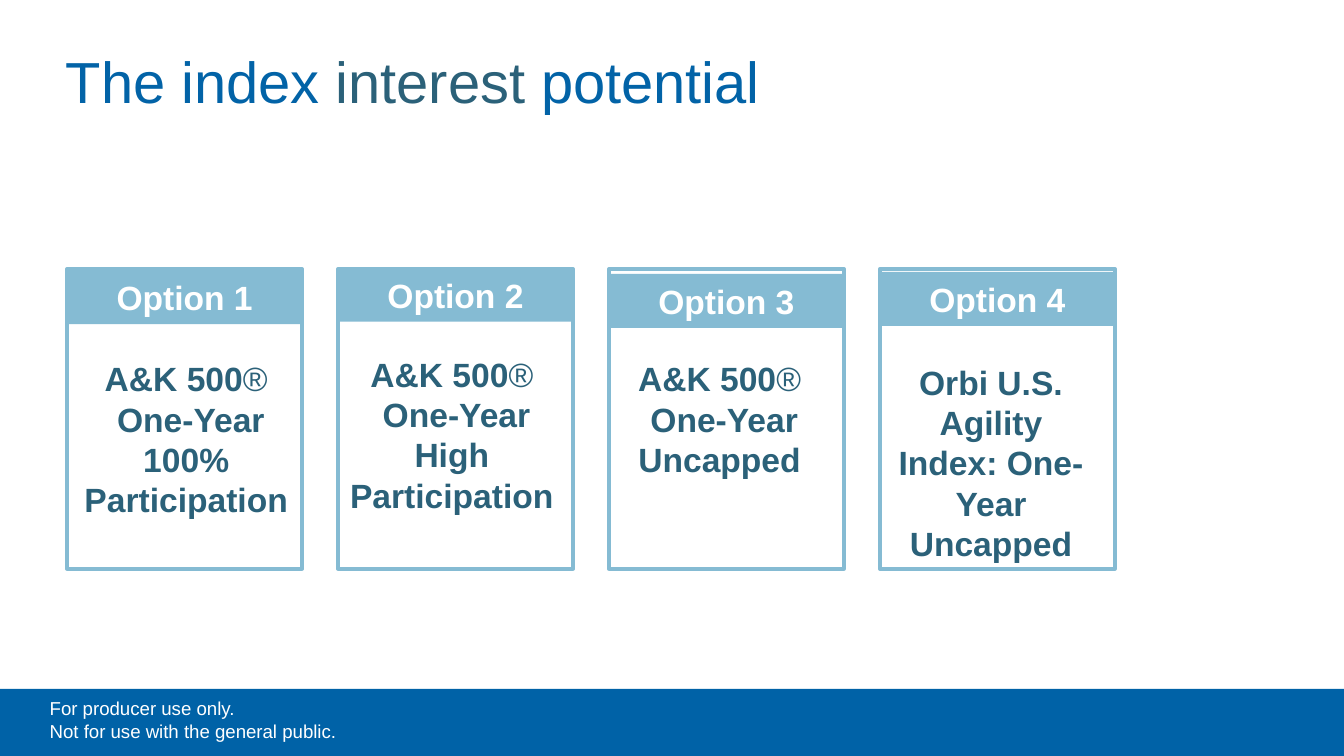
from dataclasses import dataclass
from pptx import Presentation
from pptx.dml.color import RGBColor
from pptx.enum.shapes import MSO_SHAPE
from pptx.enum.text import MSO_ANCHOR, PP_ALIGN
from pptx.util import Cm, Pt


@dataclass(frozen=True)
class Theme:
    font: str = "Arial"
    blue: str = "0062A7"
    title: str = "0263A7"
    teal: str = "2B6179"
    sky: str = "85BBD3"
    white: str = "FFFFFF"
    head: float = 31
    body: float = 18
    note: float = 10


theme = Theme()


def style(run, size, color, bold=False):
    font = run.font
    font.name, font.size, font.bold = theme.font, Pt(size), bold
    font.color.rgb = RGBColor.from_string(color)


def place(shape, box):
    shape.left, shape.top, shape.width, shape.height = map(Cm, box)


def add_rect(slide, box, fill, line=None):
    rect = slide.shapes.add_shape(MSO_SHAPE.RECTANGLE, *map(Cm, box))
    rect.shadow.inherit = False
    rect.fill.solid()
    rect.fill.fore_color.rgb = RGBColor.from_string(fill)
    if line:
        rect.line.color.rgb = RGBColor.from_string(line)
        rect.line.width = Pt(2.25)
    else:
        rect.line.fill.background()
    return rect


def add_text(slide, box, text):
    frame = slide.shapes.add_textbox(*map(Cm, box)).text_frame
    frame.word_wrap = True
    frame.text = text
    return frame


def add_title(slide, box, parts):
    title = slide.shapes.title
    place(title, box)
    frame = title.text_frame
    frame.vertical_anchor = MSO_ANCHOR.MIDDLE
    para = frame.paragraphs[0]
    para.alignment = PP_ALIGN.LEFT
    para.line_spacing = 0.9
    for text, color in parts:
        run = para.add_run()
        run.text = text
        style(run, theme.head, color)


def add_card(slide, box, name, index, terms, drop, shift, depth):
    left, top, width, height = box
    add_rect(slide, box, theme.white, theme.sky)
    head = add_rect(slide, (left, top + drop, width, 1.02), theme.sky)
    head.text_frame.text = name
    para = head.text_frame.paragraphs[0]
    para.alignment = PP_ALIGN.CENTER
    style(para.runs[0], theme.body, theme.white, True)

    area = (left + shift, top + depth, width, height - depth)
    lines = [index, terms] if index else [terms]
    frame = add_text(slide, area, "\n".join(lines))
    for para in frame.paragraphs:
        para.alignment = PP_ALIGN.CENTER
        style(para.runs[0], theme.body, theme.teal, True)
    if index:
        mark = frame.paragraphs[0].add_run()
        mark.text = "®"
        style(mark, theme.body, theme.teal)


def add_footer(slide, box, text):
    left, top, width, height = box
    add_rect(slide, box, theme.blue)
    frame = add_text(slide, (left + 0.69, top + 0.03, 9.09, 1.12), text)
    for run in frame.paragraphs[0].runs:
        style(run, theme.note, theme.white)


def main():
    deck = Presentation()
    deck.slide_width, deck.slide_height = Cm(25.4), Cm(14.29)
    slide = deck.slides.add_slide(deck.slide_layouts[5])
    add_footer(slide, (0, 13.02, 25.4, 1.27),
               "For producer use only.\vNot for use with the general public.")
    add_title(slide, (0.99, 0.81, 22.96, 1.6), [
        ("The index ", theme.title),
        ("interest", theme.teal),
        (" potential", theme.title),
    ])
    cards = [
        ("A&K 500", " One-Year 100% Participation", 0.02, 0.03, 1.56),
        ("A&K 500", " One-Year High Participation", -0.03, -0.07, 1.47),
        ("A&K 500", " One-Year Uncapped", 0.09, -0.13, 1.56),
        ("", "Orbi U.S. Agility Index: One-Year Uncapped", 0.05, -0.12, 1.62),
    ]
    for i, card in enumerate(cards):
        add_card(slide, (1.27 + 5.12 * i, 5.09, 4.44, 5.66),
                 f"Option {i + 1}", *card)
    deck.save("out.pptx")


if __name__ == "__main__":
    main()
